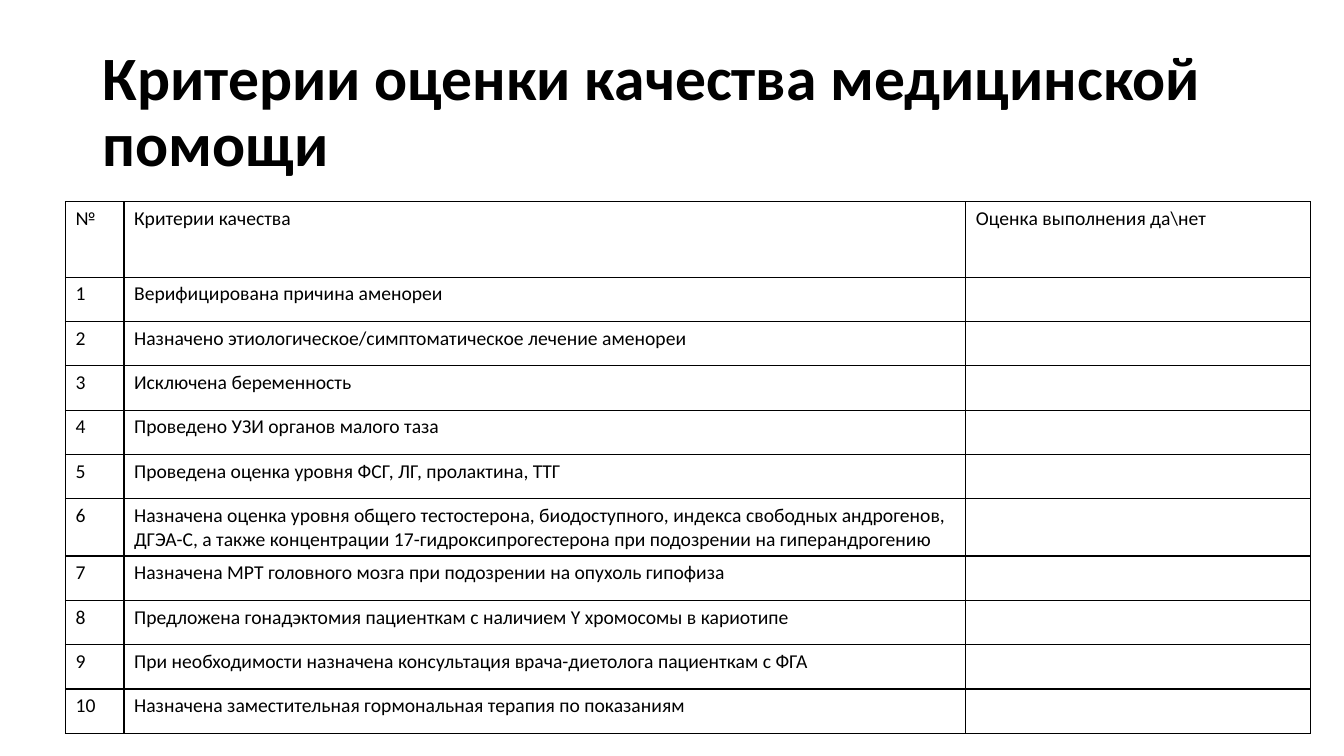
from lxml.etree import SubElement as Sub
from pptx import Presentation
from pptx.dml.color import RGBColor
from pptx.enum.text import MSO_ANCHOR as Anchor
from pptx.oxml.ns import qn
from pptx.util import Inches, Pt

BLACK = RGBColor(0, 0, 0)
WHITE = RGBColor(255, 255, 255)
FONT = "Calibri"

TITLE = "Критерии оценки качества медицинской помощи"
HEAD = ["№", "Критерии качества", "Оценка выполнения да\\нет"]
ITEMS = [
    "Верифицирована причина аменореи",
    "Назначено этиологическое/симптоматическое лечение аменореи",
    "Исключена беременность",
    "Проведено УЗИ органов малого таза",
    "Проведена оценка уровня ФСГ, ЛГ, пролактина, ТТГ",
    "Назначена оценка уровня общего тестостерона, биодоступного, индекса "
    "свободных андрогенов, ДГЭА-С, а также концентрации "
    "17-гидроксипрогестерона при подозрении на гиперандрогению",
    "Назначена МРТ головного мозга при подозрении на опухоль гипофиза",
    "Предложена гонадэктомия пациенткам с наличием Y хромосомы в кариотипе",
    "При необходимости назначена консультация врача-диетолога пациенткам с ФГА",
    "Назначена заместительная гормональная терапия по показаниям",
]
COLS = [0.58, 8.35, 3.42]
HEAD_H, ROW_H = 0.75, 0.44


def write(frame, text, size=14, bold=False, space=1.0):
    """Put one formatted paragraph into a text frame."""
    para = frame.paragraphs[0]
    para.text = text
    para.line_spacing = space
    font = para.font
    if para.runs:
        font = para.runs[0].font
    font.name, font.size, font.bold = FONT, Pt(size), bold
    font.color.rgb = BLACK


def add_title(slide, text):
    box = slide.shapes.add_textbox(
        Inches(0.92), Inches(0.4), Inches(11.5), Inches(1.45))
    frame = box.text_frame
    frame.word_wrap = True
    frame.vertical_anchor = Anchor.MIDDLE
    write(frame, text, size=44, bold=True, space=0.9)


def frame_cell(cell):
    """Draw a thin line on all four sides of a cell."""
    props = cell._tc.get_or_add_tcPr()
    for side in ("lnL", "lnR", "lnT", "lnB"):
        line = Sub(props, qn(f"a:{side}"), w=str(Pt(1)))
        fill = Sub(line, qn("a:solidFill"))
        Sub(fill, qn("a:srgbClr"), val=str(BLACK))


def add_grid(slide, rows):
    high = HEAD_H + ROW_H * (len(rows) - 1)
    table = slide.shapes.add_table(
        len(rows), len(COLS), Inches(0.65), Inches(2),
        Inches(sum(COLS)), Inches(high)).table
    table.first_row = table.horz_banding = False
    for col, width in zip(table.columns, COLS):
        col.width = Inches(width)
    for i, (row, texts) in enumerate(zip(table.rows, rows)):
        row.height = Inches(ROW_H if i else HEAD_H)
        for cell, text in zip(row.cells, texts):
            frame_cell(cell)
            cell.fill.solid()
            cell.fill.fore_color.rgb = WHITE
            write(cell.text_frame, text)


def main():
    deck = Presentation()
    deck.slide_width, deck.slide_height = Inches(13.33), Inches(7.5)
    slide = deck.slides.add_slide(deck.slide_layouts[6])

    # Heading
    add_title(slide, TITLE)

    # Numbered criteria with an empty column for the marks
    rows = [[str(n), item, ""] for n, item in enumerate(ITEMS, 1)]
    add_grid(slide, [HEAD] + rows)

    deck.save("out.pptx")


if __name__ == "__main__":
    main()
